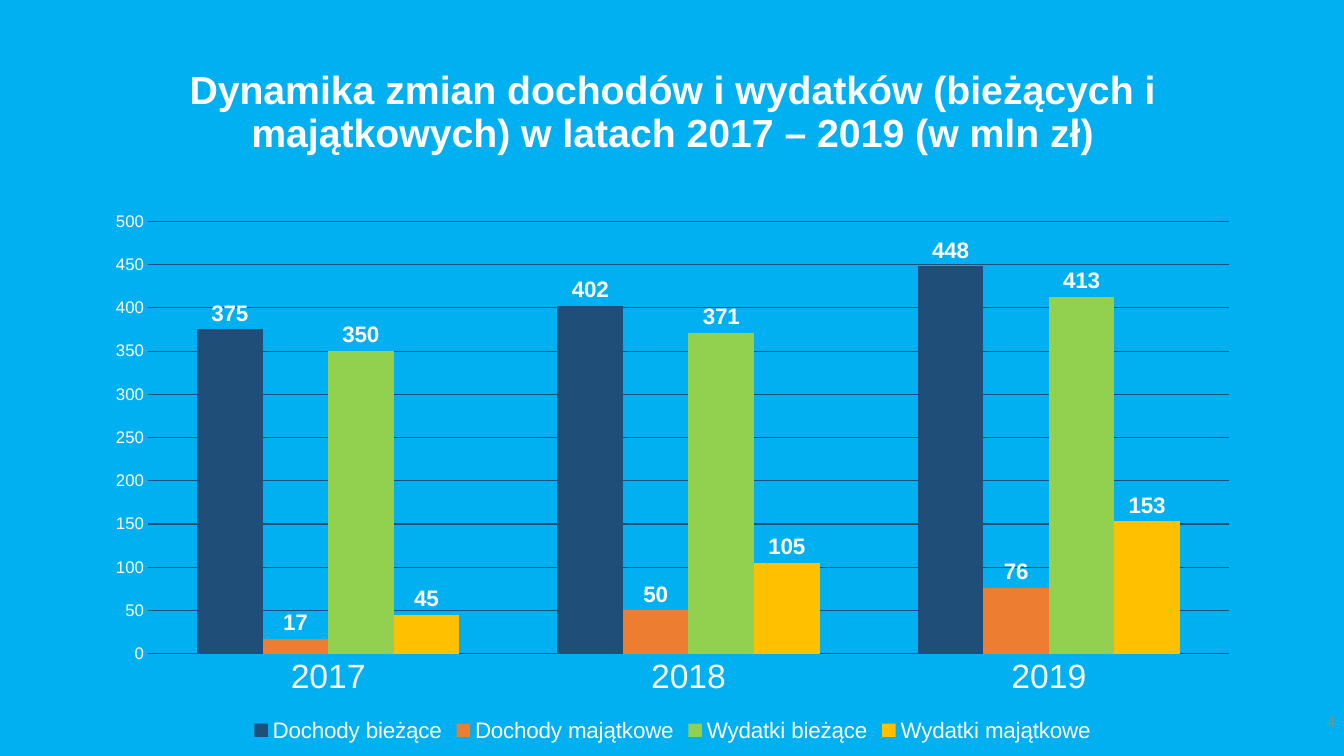
"""Build a slide with a clustered column chart of income and spending."""
import pptx
import pptx.chart.data
import pptx.dml.color
import pptx.enum.chart
import pptx.enum.text
import pptx.util
from pptx.util import Inches

YEARS = ["2017", "2018", "2019"]
SERIES = [
    ("Dochody bieżące", [375, 402, 448], "1F4E79"),
    ("Dochody majątkowe", [17, 50, 76], "ED7D31"),
    ("Wydatki bieżące", [350, 371, 413], "92D050"),
    ("Wydatki majątkowe", [45, 105, 153], "FFC000"),
]


def rgb(value):
    """Turn a hex string into a colour."""
    return pptx.dml.color.RGBColor.from_string(value)


def set_font(font, size, color="FFFFFF", name="Arial", bold=False):
    """Set the size, colour, face and weight of a font."""
    font.size = pptx.util.Pt(size)
    font.color.rgb = rgb(color)
    font.name = name
    font.bold = bold


def add_text(s, box, text, align, size, **style):
    """Add a wrapped, vertically centred text box."""
    tf = s.shapes.add_textbox(*map(Inches, box)).text_frame
    tf.word_wrap = True
    tf.vertical_anchor = pptx.enum.text.MSO_ANCHOR.MIDDLE
    p = tf.paragraphs[0]
    p.text = text
    p.alignment = align
    set_font(p.font, size, **style)
    return p


def style_axis(axis, size):
    """Hide the line and ticks of an axis and set its label font."""
    axis.major_tick_mark = pptx.enum.chart.XL_TICK_MARK.NONE
    axis.minor_tick_mark = pptx.enum.chart.XL_TICK_MARK.NONE
    axis.format.line.fill.background()
    set_font(axis.tick_labels.font, size)


def style_series(series, color):
    """Fill the columns of a series and label them with their values."""
    series.format.fill.solid()
    series.format.fill.fore_color.rgb = rgb(color)
    series.invert_if_negative = False
    labels = series.data_labels
    labels.show_value = True
    labels.position = pptx.enum.chart.XL_LABEL_POSITION.OUTSIDE_END
    set_font(labels.font, 16, bold=True)


def add_columns(s, box):
    """Add the clustered column chart with its legend."""
    data = pptx.chart.data.CategoryChartData(number_format="0")
    data.categories = YEARS
    for name, values, _ in SERIES:
        data.add_series(name, values)
    kind = pptx.enum.chart.XL_CHART_TYPE.COLUMN_CLUSTERED
    chart = s.shapes.add_chart(kind, *map(Inches, box), data).chart
    set_font(chart.font, 10, "000000", "Calibri")
    chart.has_title = False

    style_axis(chart.category_axis, 24)
    axis = chart.value_axis
    style_axis(axis, 12)
    axis.minimum_scale, axis.maximum_scale, axis.major_unit = 0, 500, 50
    axis.tick_labels.number_format = "0"
    axis.tick_labels.number_format_is_linked = False
    line = axis.major_gridlines.format.line
    line.color.rgb = rgb("1F4E79")
    line.width = pptx.util.Pt(0.75)

    plot = chart.plots[0]
    plot.gap_width = 150
    plot.overlap = 0
    plot.vary_by_categories = False
    for series, (_, _, color) in zip(plot.series, SERIES):
        style_series(series, color)

    chart.has_legend = True
    chart.legend.position = pptx.enum.chart.XL_LEGEND_POSITION.BOTTOM
    chart.legend.include_in_layout = False
    set_font(chart.legend.font, 16)


def main():
    """Build and save the slide."""
    prs = pptx.Presentation()
    prs.slide_width, prs.slide_height = Inches(13.33), Inches(7.5)
    s = prs.slides.add_slide(prs.slide_layouts[6])
    s.background.fill.solid()
    s.background.fill.fore_color.rgb = rgb("00B0F0")

    align = pptx.enum.text.PP_ALIGN
    title = add_text(
        s, (0.92, 0.4, 11.5, 1.45),
        "Dynamika zmian dochodów i wydatków (bieżących i majątkowych) "
        "w latach 2017 – 2019 (w mln zł)",
        align.CENTER, 28, bold=True)
    title.line_spacing = 0.9
    add_columns(s, (0.92, 2, 11.5, 5.41))
    add_text(s, (9.42, 6.95, 3.92, 0.4), "4", align.RIGHT, 12,
             color="8C8C8C", name="Calibri")
    prs.save("out.pptx")


if __name__ == "__main__":
    main()
